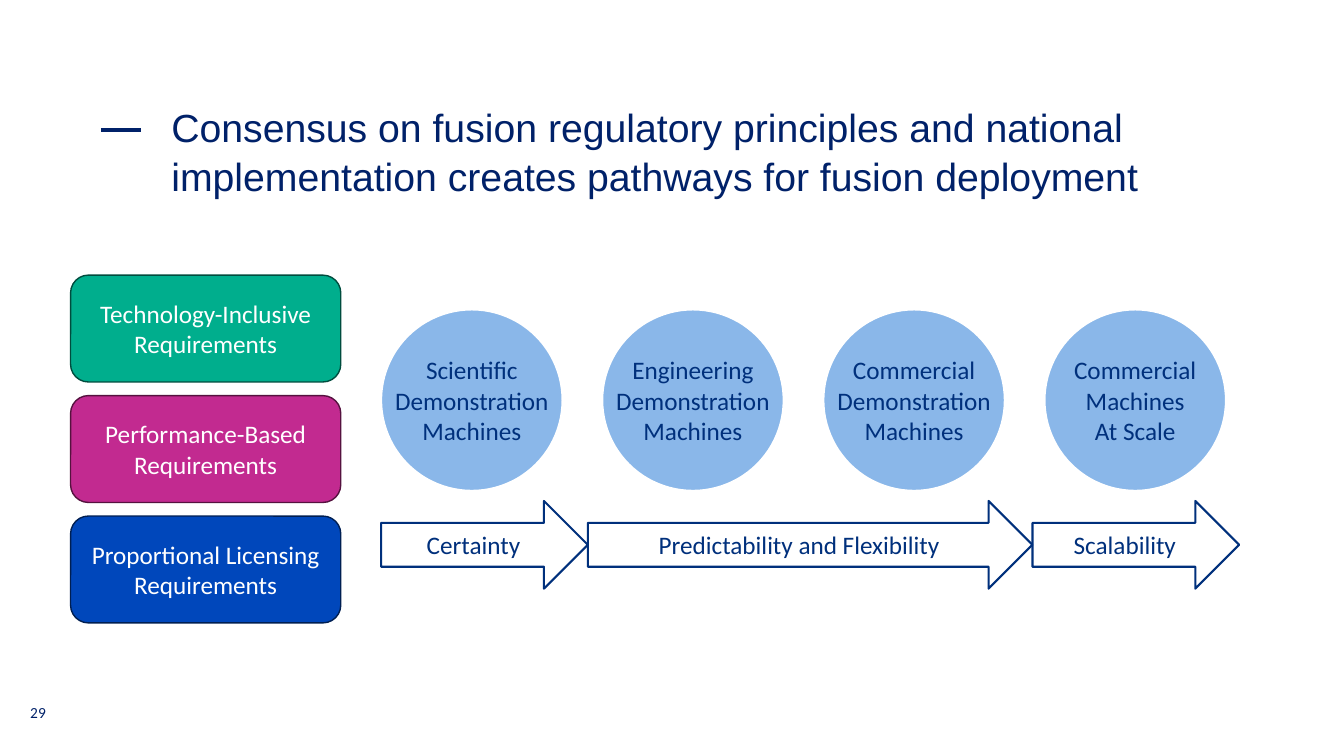
from dataclasses import dataclass

import pptx
import pptx.dml.color
import pptx.enum.shapes
import pptx.enum.text
import pptx.oxml.ns
import pptx.util
from lxml import etree

Inches = pptx.util.Inches
Shapes = pptx.enum.shapes.MSO_SHAPE
Align = pptx.enum.text.PP_ALIGN
Anchor = pptx.enum.text.MSO_ANCHOR


@dataclass(frozen=True)
class Theme:
    navy: str = "002169"
    ink: str = "00307C"
    sky: str = "8AB7E9"
    white: str = "FFFFFF"
    title_font: str = "Arial"
    body_font: str = "Calibri"
    title_size: int = 28
    body_size: int = 18
    number_size: int = 11


THEME = Theme()

PRINCIPLES = [
    ("Technology-Inclusive Requirements", "00AE8D", "004C3E"),
    ("Performance-Based Requirements", "C22A90", "55123F"),
    ("Proportional Licensing Requirements", "0047BB", "001F52"),
]
MACHINES = [
    ["Scientific", "Demonstration", "Machines"],
    ["Engineering", "Demonstration", "Machines"],
    ["Commercial", "Demonstration", "Machines"],
    ["Commercial", "Machines", "At Scale"],
]
OUTCOMES = [("Certainty", 2.05), ("Predictability and Flexibility", 4.41), ("Scalability", 2.05)]


def rgb(value):
    return pptx.dml.color.RGBColor.from_string(value)


def write(box, lines, size, color, font=THEME.body_font, align=Align.CENTER):
    para = box.text_frame.paragraphs[0]
    para.alignment = align
    for index, line in enumerate(lines):
        if index:
            para.add_line_break()
        span = para.add_run()
        span.text = line
        span.font.size = pptx.util.Pt(size)
        span.font.name = font
        span.font.color.rgb = rgb(color)
    return para


def add_label_shape(page, kind, left, top, width, height, lines, fill, line, weight, color, wrap=True):
    shape = page.shapes.add_shape(kind, Inches(left), Inches(top), Inches(width), Inches(height))
    shape.shadow.inherit = False
    if fill:
        shape.fill.solid()
        shape.fill.fore_color.rgb = rgb(fill)
    else:
        shape.fill.background()
    shape.line.color.rgb = rgb(line)
    shape.line.width = pptx.util.Pt(weight)
    shape.text_frame.word_wrap = wrap
    shape.text_frame.vertical_anchor = Anchor.MIDDLE
    write(shape, lines, THEME.body_size, color)


def add_text_box(page, left, top, width, height, margin_y):
    box = page.shapes.add_textbox(Inches(left), Inches(top), Inches(width), Inches(height))
    frame = box.text_frame
    frame.word_wrap = True
    frame.margin_left = frame.margin_right = 0
    frame.margin_top = frame.margin_bottom = Inches(margin_y)
    return box


def add_title(page, left, top, width, height):
    dash_y = Inches(top + 0.29)
    dash = page.shapes.add_connector(
        pptx.enum.shapes.MSO_CONNECTOR.STRAIGHT, Inches(left), dash_y, Inches(left + 0.4), dash_y
    )
    dash.line.color.rgb = rgb(THEME.navy)
    dash.line.width = pptx.util.Pt(2.5)
    etree.SubElement(dash.element.spPr, pptx.oxml.ns.qn("a:effectLst"))
    indent = 0.7
    box = add_text_box(page, left + indent, top, width - indent, height, 0)
    text = (
        "Consensus on fusion regulatory principles and national "
        "implementation creates pathways for fusion deployment"
    )
    para = write(box, [text], THEME.title_size, THEME.navy, THEME.title_font, Align.LEFT)
    para.line_spacing = 1.05


def add_principles(page, left, top, width, height):
    card_height = 1.06
    pitch = (height - card_height) / (len(PRINCIPLES) - 1)
    for index, (text, fill, line) in enumerate(PRINCIPLES):
        add_label_shape(page, Shapes.ROUNDED_RECTANGLE, left, top + index * pitch, width, card_height,
                        [text], fill, line, 1, THEME.white)


def add_machines(page, left, top, width, height):
    pitch = (width - height) / (len(MACHINES) - 1)
    for index, lines in enumerate(MACHINES):
        add_label_shape(page, Shapes.OVAL, left + index * pitch, top, height, height,
                        lines, THEME.sky, THEME.white, 1.5, THEME.ink, wrap=False)


def add_outcomes(page, left, top, height):
    for text, width in OUTCOMES:
        add_label_shape(page, Shapes.RIGHT_ARROW, left, top, width, height,
                        [text], None, THEME.ink, 1.5, THEME.ink)
        left += width


def add_page_number(page, left, top, width, height):
    box = add_text_box(page, left, top, width, height, 0.05)
    write(box, ["29"], THEME.number_size, THEME.navy, align=Align.LEFT)


def main():
    deck = pptx.Presentation()
    deck.slide_width = Inches(13.33)
    deck.slide_height = Inches(7.5)
    page = deck.slides.add_slide(deck.slide_layouts[6])
    add_title(page, 1, 1, 10.97, 0.94)
    add_page_number(page, 0.3, 6.93, 0.48, 0.4)
    add_machines(page, 3.78, 3.07, 8.38, 1.8)
    add_outcomes(page, 3.78, 4.97, 0.87)
    add_principles(page, 0.7, 2.73, 2.68, 3.45)
    deck.save("out.pptx")


if __name__ == "__main__":
    main()
